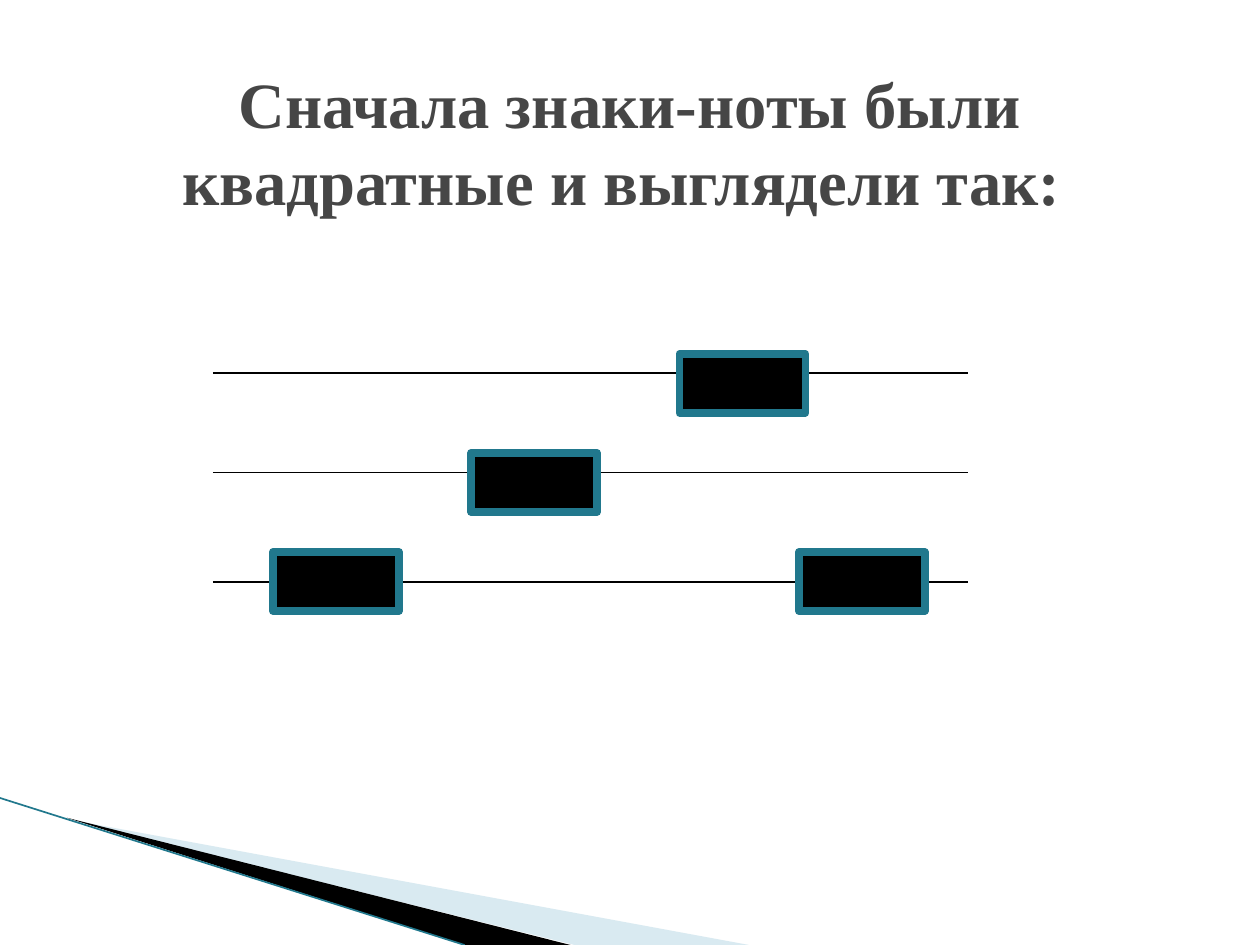
"""Build a slide showing square notes on a three-line staff."""
from lxml.etree import SubElement
from pptx import Presentation
from pptx.dml.color import RGBColor
from pptx.enum.shapes import MSO_CONNECTOR, MSO_SHAPE
from pptx.enum.text import MSO_ANCHOR, MSO_AUTO_SIZE, PP_ALIGN
from pptx.oxml.ns import qn
from pptx.util import Pt

BLACK = RGBColor(0x00, 0x00, 0x00)
GRAY = RGBColor(0x46, 0x46, 0x46)
TEAL = RGBColor(0x21, 0x78, 0x8D)
PALE_BLUE = RGBColor(0xA0, 0xCB, 0xDC)

TITLE = "Сначала знаки-ноты были квадратные и выглядели так: "
STAFF_LEFT, STAFF_RIGHT = 121.7, 553
STAFF_YS = [213.1, 270, 332.6]
NOTE_W, NOTE_H = 72, 33.8
NOTE_TOP, NOTE_STEP = 202.2, 56.6
NOTES = [(156, 2), (269.2, 1), (388.3, 0), (456.5, 2)]
WEDGES = [
    ([(39.6, 468.4), (428, 540), (328.3, 540)], PALE_BLUE, 40),
    ([(38.2, 467.3), (326, 540), (265.5, 540)], BLACK, 100),
]
EDGE = (0, 456, 265.5, 540)


def style(s, fill, alpha=100):
    s.shadow.inherit = False
    s.fill.solid()
    s.fill.fore_color.rgb = fill
    if alpha < 100:
        color = s.fill._xPr.find(qn("a:solidFill"))[0]
        SubElement(color, qn("a:alpha")).set("val", str(alpha * 1000))


def add_wedge(shapes, points, fill, alpha):
    builder = shapes.build_freeform(Pt(points[0][0]), Pt(points[0][1]))
    builder.add_line_segments([(Pt(x), Pt(y)) for x, y in points[1:]])
    s = builder.convert_to_shape()
    style(s, fill, alpha)
    s.line.fill.background()


def add_line(shapes, ends, color, width):
    s = shapes.add_connector(MSO_CONNECTOR.STRAIGHT, *map(Pt, ends))
    s.line.color.rgb = color
    s.line.width = Pt(width)
    SubElement(s._element.spPr, qn("a:effectLst"))


def add_note(shapes, left, row):
    s = shapes.add_shape(MSO_SHAPE.RECTANGLE, Pt(left), Pt(NOTE_TOP + row * NOTE_STEP),
                         Pt(NOTE_W), Pt(NOTE_H))
    style(s, BLACK)
    s.line.color.rgb = TEAL
    s.line.width = Pt(4.33)


def add_title(sp):
    sp.left, sp.top, sp.width, sp.height = Pt(36), Pt(49), Pt(648), Pt(102)
    tf = sp.text_frame
    tf.word_wrap = True
    tf.auto_size = MSO_AUTO_SIZE.NONE
    tf.vertical_anchor = MSO_ANCHOR.MIDDLE
    tf.margin_bottom = Pt(42)
    p = tf.paragraphs[0]
    p.alignment = PP_ALIGN.CENTER
    r = p.add_run()
    r.text = TITLE
    r.font.name = "Times New Roman"
    r.font.size = Pt(36.9)
    r.font.bold = True
    r.font.color.rgb = GRAY


def main():
    prs = Presentation()
    prs.slide_width, prs.slide_height = Pt(720), Pt(540)
    slide = prs.slides.add_slide(prs.slide_layouts[5])
    shapes = slide.shapes
    add_title(shapes.title)
    for points, fill, alpha in WEDGES:
        add_wedge(shapes, points, fill, alpha)
    add_line(shapes, EDGE, TEAL, 0.95)
    for y in STAFF_YS:
        add_line(shapes, (STAFF_LEFT, y, STAFF_RIGHT, y), BLACK, 0.75)
    for left, row in NOTES:
        add_note(shapes, left, row)
    prs.save("out.pptx")


if __name__ == "__main__":
    main()
